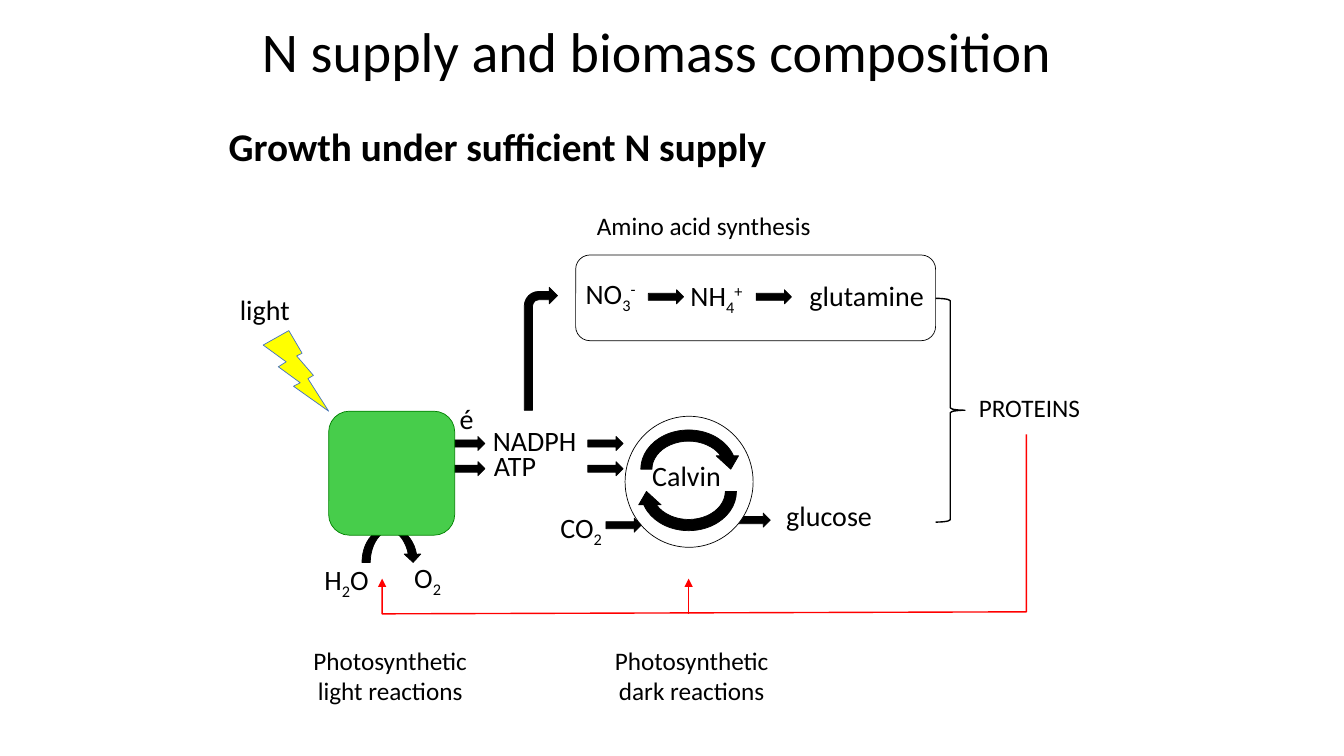
from lxml import etree
from pptx import Presentation
from pptx.dml.color import RGBColor
from pptx.enum.shapes import MSO_CONNECTOR, MSO_SHAPE as SHAPE
from pptx.enum.text import MSO_ANCHOR, PP_ALIGN
from pptx.oxml.ns import qn
from pptx.util import Inches, Pt

FONT = "Calibri"
BLACK, RED = "000000", "FF0000"
BASELINES = {"_": "-25000", "^": "30000"}


def grid(*cells):
    """Turn counts of tenth-inch columns and rows into lengths."""
    return [Inches(cell / 10) for cell in cells]


def rgb(color):
    return RGBColor.from_string(color)


def style_paragraph(paragraph, size, bold=False, align=None):
    paragraph.alignment = align
    font = paragraph.font
    font.name, font.size, font.bold = FONT, Pt(size), bold
    font.color.rgb = rgb(BLACK)


def add_formula(paragraph, formula):
    """Write text in which _ lowers and ^ raises the next character."""
    plain = ""
    symbols = iter(formula)
    for symbol in symbols:
        if symbol not in BASELINES:
            plain += symbol
            continue
        if plain:
            paragraph.add_run().text = plain
            plain = ""
        shifted = paragraph.add_run()
        shifted.text = next(symbols)
        shifted._r.get_or_add_rPr().set("baseline", BASELINES[symbol])
    if plain:
        paragraph.add_run().text = plain


def add_label(slide, text, left, top, width, height=4.4, size=20, bold=False,
              wrap=False, align=None):
    frame = slide.shapes.add_textbox(*grid(left, top, width, height)).text_frame
    frame.word_wrap = wrap
    paragraph = frame.paragraphs[0]
    add_formula(paragraph, text)
    style_paragraph(paragraph, size, bold, align)
    return paragraph


def add_symbol(slide, preset, box, fill=BLACK, line=BLACK, weight=0.5, rotation=0):
    symbol = slide.shapes.add_shape(preset, *grid(*box))
    symbol.shadow.inherit = False
    symbol.rotation = rotation
    if fill:
        symbol.fill.solid()
        symbol.fill.fore_color.rgb = rgb(fill)
    else:
        symbol.fill.background()
    symbol.line.color.rgb = rgb(line)
    symbol.line.width = Pt(weight)


def add_step_arrow(slide, left, top):
    add_symbol(slide, SHAPE.RIGHT_ARROW, (left, top, 3.5, 1.4))


def style_feedback(line):
    line.color.rgb = rgb(RED)
    line.width = Pt(1)
    etree.SubElement(line._ln, qn("a:tailEnd"), type="triangle")


def add_title(slide, text):
    title = slide.shapes.title
    title.left, title.top, title.width, title.height = grid(20.1, 0.8, 90, 9.1)
    title.text_frame.text = text
    title.text_frame.vertical_anchor = MSO_ANCHOR.MIDDLE
    heading = title.text_frame.paragraphs[0]
    heading.line_spacing = 0.9
    style_paragraph(heading, 40, align=PP_ALIGN.CENTER)


def add_light_reactions(slide):
    for row in (43.3, 45.8):
        add_step_arrow(slide, 44.6, row)
    add_symbol(slide, SHAPE.CURVED_DOWN_ARROW, (35.9, 52.5, 5.9, 3.3))
    add_symbol(slide, SHAPE.ROUNDED_RECTANGLE, (32.6, 40.8, 12.5, 12.3), "47CD4B", "008000")
    add_symbol(slide, SHAPE.LIGHTNING_BOLT, (26.1, 32.8, 6.5, 8), "FFFF00", "4472C4")
    add_label(slide, "light", 22.8, 28.5, 7)
    add_label(slide, "H_2O", 31.2, 55.3, 6.6)
    add_label(slide, "O_2", 40.1, 55.1, 4.8)
    add_label(slide, "é", 44.6, 39.3, 3.4)
    add_label(slide, "NADPH", 47.9, 41.5, 10.4)
    add_label(slide, "ATP", 48, 44, 6.5)


def add_dark_reactions(slide):
    add_step_arrow(slide, 72.9, 50.9)
    add_symbol(slide, SHAPE.OVAL, (62, 41.3, 12.7, 13), "FFFFFF")
    for top, rotation in ((42.1, 0), (44.3, 180)):
        add_symbol(slide, SHAPE.CIRCULAR_ARROW, (63, top, 10.6, 8.9), rotation=rotation)
    for row in (43.3, 45.8):
        add_step_arrow(slide, 58.3, row)
    add_step_arrow(slide, 60.1, 51.4)
    add_label(slide, "Calvin", 63.7, 45, 8.9)
    add_label(slide, "CO_2", 54.6, 50.2, 6.3)
    add_label(slide, "glucose", 77, 49, 10.6)


def add_amino_acid_synthesis(slide):
    add_symbol(slide, SHAPE.BENT_ARROW, (52, 28.5, 3.3, 12.2))
    add_symbol(slide, SHAPE.ROUNDED_RECTANGLE, (57.1, 25.3, 35.7, 8.5), fill=None)
    add_label(slide, "NO_3^-", 57.1, 26.9, 7.5)
    add_label(slide, "NH_4^+", 67.5, 27.1, 7.5)
    add_label(slide, "glutamine", 79.3, 27.1, 13.5)
    for column in (64.3, 75):
        add_step_arrow(slide, column, 28.75)


def add_protein_feedback(slide):
    add_symbol(slide, SHAPE.RIGHT_BRACE, (92.8, 29.6, 2.9, 22.2), fill=None, weight=1)
    add_label(slide, "PROTEINS", 96.1, 38.4, 12.3, 4, size=18)

    start, *bends = [grid(*point) for point in
                     ((101.8, 43.1), (101.8, 60.7), (37.9, 60.9), (37.9, 57.4))]
    builder = slide.shapes.build_freeform(*start)
    builder.add_line_segments(bends, close=False)
    to_light = builder.convert_to_shape()
    to_light.shadow.inherit = False
    to_light.fill.background()
    style_feedback(to_light.line)

    to_dark = slide.shapes.add_connector(MSO_CONNECTOR.STRAIGHT, *grid(68.3, 60.9, 68.3, 57.4))
    style_feedback(to_dark.line)
    etree.SubElement(to_dark._element.spPr, qn("a:effectLst"))


def main():
    deck = Presentation()
    deck.slide_width, deck.slide_height = Inches(13.33), Inches(7.5)
    slide = deck.slides.add_slide(deck.slide_layouts[5])

    add_title(slide, "N supply and biomass composition")
    subtitle = add_label(slide, "Growth under sufficient N supply", 21.7, 12.2, 90, 6,
                         size=28, bold=True, wrap=True)
    subtitle.line_spacing = 0.9

    add_light_reactions(slide)
    add_dark_reactions(slide)
    add_amino_acid_synthesis(slide)
    add_protein_feedback(slide)

    for caption, left, top, width, height in (
        ("Amino acid synthesis", 57.6, 20.4, 24.4, 4),
        ("Photosynthetic light reactions", 27.8, 63.5, 21.8, 7.1),
        ("Photosynthetic dark reactions", 57.7, 63.5, 21.8, 7.1),
    ):
        add_label(slide, caption, left, top, width, height, size=18,
                  wrap=True, align=PP_ALIGN.CENTER)

    deck.save("out.pptx")


if __name__ == "__main__":
    main()
